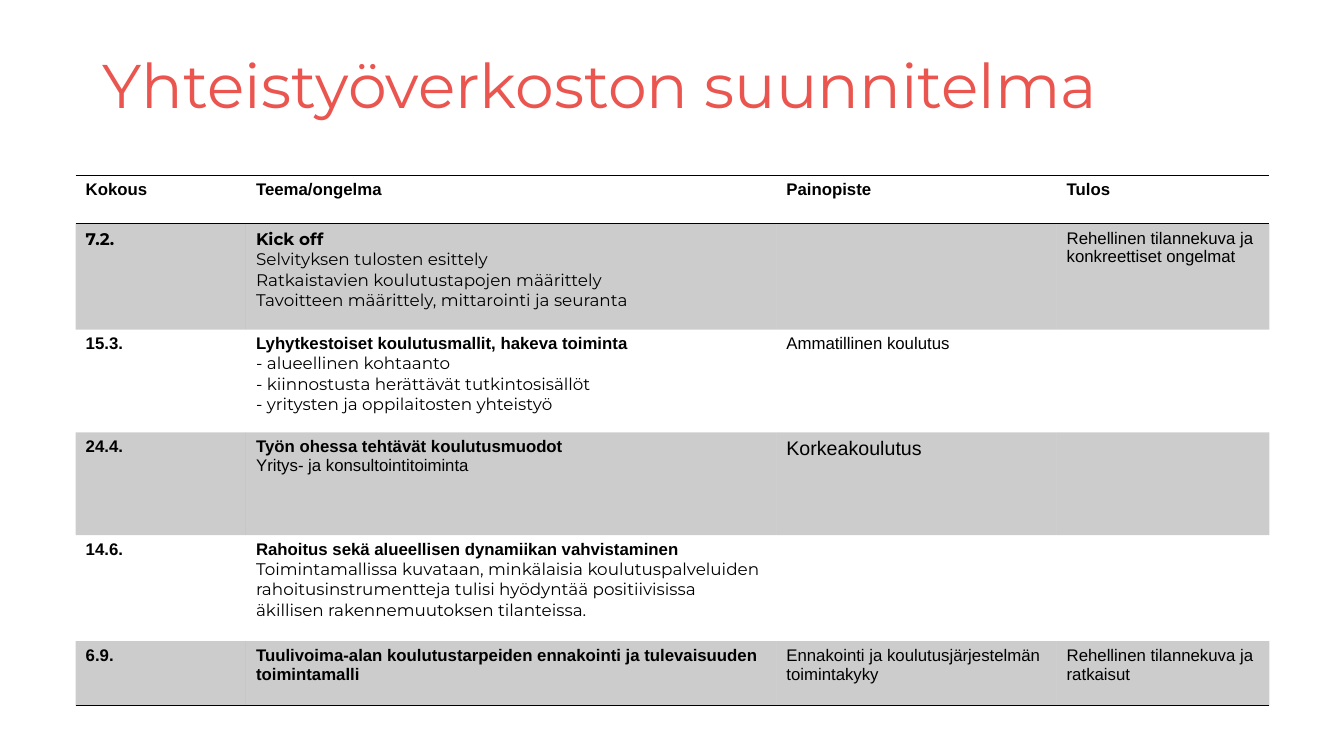
from dataclasses import dataclass

import pptx
import pptx.dml.color
import pptx.enum.text
import pptx.oxml
import pptx.oxml.ns
import pptx.presentation
import pptx.slide
import pptx.table
import pptx.text.text
import pptx.util
from lxml import etree

Inches = pptx.util.Inches
Pt = pptx.util.Pt


@dataclass(frozen=True)
class Theme:
    title_color: str = "EA564F"
    ink: str = "000000"
    band_opacity: int = 20
    sans: str = "Arial"
    display: str = "Montserrat"
    title_size: int = 44
    body_size: int = 12
    large_size: int = 14
    rule_width: float = 1
    plain_table_style: str = "{2D5ABB26-0587-4C30-8999-92F81FD0307C}"


THEME = Theme()


@dataclass(frozen=True)
class Line:
    text: str
    bold: bool = False
    font: str = THEME.sans
    size: int = THEME.body_size
    color: str = THEME.ink


@dataclass(frozen=True)
class Meeting:
    height: float
    cells: tuple[tuple[Line, ...], ...]
    shaded: bool = False
    borders: tuple[str, ...] = ()


def heading(text: str, font: str = THEME.sans) -> Line:
    return Line(text, bold=True, font=font)


def detail(text: str) -> Line:
    return Line(text, font=THEME.display)


COLUMN_WIDTHS = (1.69, 5.26, 2.78, 2.11)
MEETINGS = (
    Meeting(
        0.48,
        tuple((heading(text),) for text in ("Kokous", "Teema/ongelma", "Painopiste", "Tulos")),
        borders=("lnT", "lnB"),
    ),
    Meeting(
        1.05,
        (
            (heading("7.2.", THEME.display),),
            (
                heading("Kick off", THEME.display),
                detail("Selvityksen tulosten esittely"),
                detail("Ratkaistavien koulutustapojen määrittely"),
                detail("Tavoitteen määrittely, mittarointi ja seuranta"),
            ),
            (),
            (Line("Rehellinen tilannekuva ja konkreettiset ongelmat"),),
        ),
        shaded=True,
    ),
    Meeting(
        1.02,
        (
            (heading("15.3."),),
            (
                heading("Lyhytkestoiset koulutusmallit, hakeva toiminta"),
                detail("- alueellinen kohtaanto"),
                detail("- kiinnostusta herättävät tutkintosisällöt"),
                detail("- yritysten ja oppilaitosten yhteistyö"),
            ),
            (Line("Ammatillinen koulutus"),),
            (),
        ),
    ),
    Meeting(
        1.02,
        (
            (heading("24.4."),),
            (heading("Työn ohessa tehtävät koulutusmuodot"), Line("Yritys- ja konsultointitoiminta")),
            (Line("Korkeakoulutus", size=THEME.large_size),),
            (),
        ),
        shaded=True,
    ),
    Meeting(
        1.05,
        (
            (heading("14.6."),),
            (
                heading("Rahoitus sekä alueellisen dynamiikan vahvistaminen"),
                detail(
                    "Toimintamallissa kuvataan, minkälaisia koulutuspalveluiden "
                    "rahoitusinstrumentteja tulisi hyödyntää positiivisissa "
                    "äkillisen rakennemuutoksen tilanteissa."
                ),
            ),
            (),
            (),
        ),
    ),
    Meeting(
        0.64,
        (
            (heading("6.9."),),
            (heading("Tuulivoima-alan koulutustarpeiden ennakointi ja tulevaisuuden toimintamalli"),),
            (Line("Ennakointi ja koulutusjärjestelmän toimintakyky"),),
            (Line("Rehellinen tilannekuva ja ratkaisut"),),
        ),
        shaded=True,
        borders=("lnB",),
    ),
)


def write_lines(frame: pptx.text.text.TextFrame, lines: tuple[Line, ...]) -> None:
    for index, line in enumerate(lines):
        para = frame.add_paragraph() if index else frame.paragraphs[0]
        span = para.add_run()
        span.text = line.text
        formats = {"name": line.font, "size": Pt(line.size), "bold": line.bold}
        for name, value in formats.items():
            setattr(span.font, name, value)
        span.font.color.rgb = pptx.dml.color.RGBColor.from_string(line.color)


def shade_cell(cell: pptx.table._Cell) -> None:
    cell.fill.solid()
    cell.fill.fore_color.rgb = pptx.dml.color.RGBColor.from_string(THEME.ink)
    color = cell._tc.tcPr.find(".//" + pptx.oxml.ns.qn("a:srgbClr"))
    alpha = etree.SubElement(color, pptx.oxml.ns.qn("a:alpha"))
    alpha.set("val", str(THEME.band_opacity * 1000))


def rule_cell(cell: pptx.table._Cell, borders: tuple[str, ...]) -> None:
    for index, border in enumerate(borders):
        rule = pptx.oxml.parse_xml(
            f'<a:{border} {pptx.oxml.ns.nsdecls("a")} w="{Pt(THEME.rule_width)}">'
            f'<a:solidFill><a:srgbClr val="{THEME.ink}"/></a:solidFill></a:{border}>'
        )
        cell._tc.get_or_add_tcPr().insert(index, rule)


def add_title(page: pptx.slide.Slide) -> None:
    box = page.shapes.add_textbox(Inches(0.92), Inches(0.15), Inches(11.5), Inches(1.45))
    formats = {"word_wrap": True, "vertical_anchor": pptx.enum.text.MSO_ANCHOR.MIDDLE}
    for name, value in formats.items():
        setattr(box.text_frame, name, value)
    title = Line(
        "Yhteistyöverkoston suunnitelma",
        font=THEME.display,
        size=THEME.title_size,
        color=THEME.title_color,
    )
    write_lines(box.text_frame, (title,))
    box.text_frame.paragraphs[0].line_spacing = 0.9


def add_plan(page: pptx.slide.Slide) -> None:
    height = sum(meeting.height for meeting in MEETINGS)
    frame = page.shapes.add_table(
        len(MEETINGS), len(COLUMN_WIDTHS),
        Inches(0.75), Inches(1.74), Inches(sum(COLUMN_WIDTHS)), Inches(height),
    )
    table = frame.table
    for name, value in {"first_row": False, "horz_banding": False}.items():
        setattr(table, name, value)
    style = table._tbl.tblPr.find(pptx.oxml.ns.qn("a:tableStyleId"))
    style.text = THEME.plain_table_style
    for column, width in zip(table.columns, COLUMN_WIDTHS):
        column.width = Inches(width)
    for row, meeting in zip(table.rows, MEETINGS):
        row.height = Inches(meeting.height)
        for cell, lines in zip(row.cells, meeting.cells):
            write_lines(cell.text_frame, lines)
            if meeting.shaded:
                shade_cell(cell)
            else:
                cell.fill.background()
            rule_cell(cell, meeting.borders)


def main() -> None:
    deck = pptx.Presentation()
    for name, value in {"slide_width": Inches(13.33), "slide_height": Inches(7.5)}.items():
        setattr(deck, name, value)
    page = deck.slides.add_slide(deck.slide_layouts[6])
    add_title(page)
    add_plan(page)
    deck.save("out.pptx")


if __name__ == "__main__":
    main()
